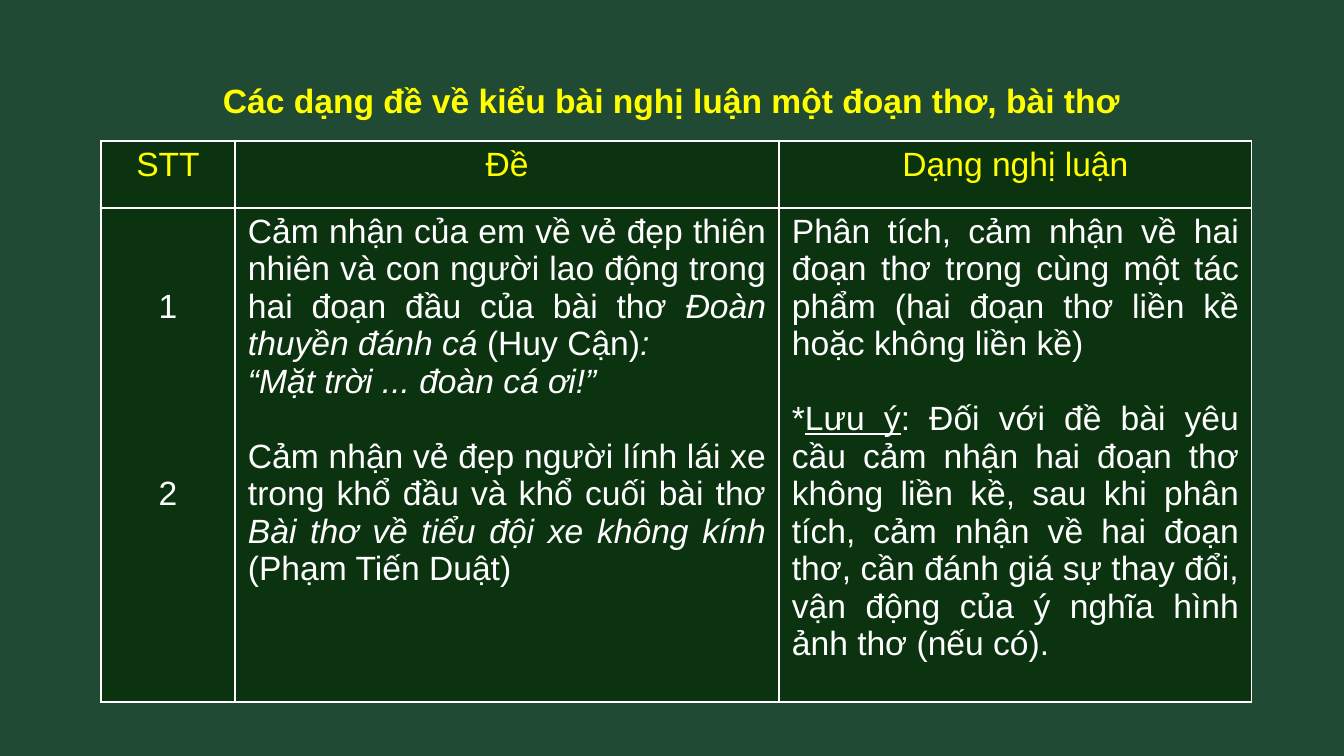
from lxml.etree import SubElement
from pptx import Presentation
from pptx.dml.color import RGBColor
from pptx.enum.text import MSO_ANCHOR, MSO_AUTO_SIZE, PP_ALIGN
from pptx.oxml.ns import qn
from pptx.util import Emu, Pt

GREEN = RGBColor(0x21, 0x4A, 0x34)
DARK_GREEN = RGBColor(0x0B, 0x33, 0x10)
YELLOW = RGBColor(0xFF, 0xFF, 0x00)
WHITE = RGBColor(0xFF, 0xFF, 0xFF)

TITLE = "Các dạng đề về kiểu bài nghị luận một đoạn thơ, bài thơ"
HEADINGS = ["STT", "Đề", "Dạng nghị luận"]
NUMBERS = [(0, [("1", "")]), (150, [("2", "")])]
TOPICS = [
    (0, [
        ("Cảm nhận của em về vẻ đẹp thiên nhiên và con người lao động trong "
         "hai đoạn đầu của bài thơ ", ""),
        ("Đoàn thuyền đánh cá ", "italic"),
        ("(Huy Cận)", ""),
        (":", "italic"),
    ]),
    (0, [("“Mặt trời ... đoàn cá ơi!”", "italic")]),
    (37.5, [
        ("Cảm nhận vẻ đẹp người lính lái xe trong khổ đầu và khổ cuối bài thơ ", ""),
        ("Bài thơ về tiểu đội xe không kính ", "italic"),
        ("(Phạm Tiến Duật)", ""),
    ]),
]
KINDS = [
    (0, [("Phân tích, cảm nhận về hai đoạn thơ trong cùng một tác phẩm "
          "(hai đoạn thơ liền kề hoặc không liền kề)", "")]),
    (37.5, [
        ("*", ""),
        ("Lưu ý", "underline"),
        (": Đối với đề bài yêu cầu cảm nhận hai đoạn thơ không liền kề, sau khi "
         "phân tích, cảm nhận về hai đoạn thơ, cần đánh giá sự thay đổi, vận động "
         "của ý nghĩa hình ảnh thơ (nếu có).", ""),
    ]),
]


def px(length):
    return Emu(round(length * 914400 / 100.8))


class Page:
    """Holds the style and the current slide, and adds its elements."""

    font = "Arial"
    size = Pt(24)

    def __init__(self, deck):
        self.slide = deck.slides.add_slide(deck.slide_layouts[5])
        fill = self.slide.background.fill
        fill.solid()
        fill.fore_color.rgb = GREEN

    def add_text(self, frame, paragraphs, color, align, bold=False):
        for index, (gap, spans) in enumerate(paragraphs):
            para = frame.add_paragraph() if index else frame.paragraphs[0]
            para.alignment = align
            para.space_before = px(gap)
            for text, style in spans:
                span = para.add_run()
                span.text = text
                span.font.name = self.font
                span.font.size = self.size
                span.font.color.rgb = color
                span.font.bold = bold
                span.font.italic = style == "italic"
                span.font.underline = style == "underline"

    def title(self, text, left, top, width, height):
        box = self.slide.shapes.title
        box.left, box.top, box.width, box.height = map(px, (left, top, width, height))
        frame = box.text_frame
        frame.word_wrap = True
        frame.auto_size = MSO_AUTO_SIZE.NONE
        frame.vertical_anchor = MSO_ANCHOR.MIDDLE
        self.add_text(frame, [(0, [(text, "")])], YELLOW, PP_ALIGN.CENTER, True)

    def table(self, left, top, widths, heights):
        table = self.slide.shapes.add_table(
            len(heights), len(widths), px(left), px(top),
            px(sum(widths)), px(sum(heights))).table
        for column, width in zip(table.columns, widths):
            column.width = px(width)
        for row, height in zip(table.rows, heights):
            row.height = px(height)
        return table

    def cell(self, cell, paragraphs, color, align, top=5):
        cell.margin_left = cell.margin_right = px(13)
        cell.margin_top, cell.margin_bottom = px(top), px(5)
        cell.vertical_anchor = MSO_ANCHOR.TOP
        properties = cell._tc.get_or_add_tcPr()
        for side in ("a:lnL", "a:lnR", "a:lnT", "a:lnB"):
            line = SubElement(properties, qn(side), w=str(Pt(1)))
            fill = SubElement(line, qn("a:solidFill"))
            SubElement(fill, qn("a:srgbClr"), val=str(WHITE))
        cell.fill.solid()
        cell.fill.fore_color.rgb = DARK_GREEN
        self.add_text(cell.text_frame, paragraphs, color, align)


def main():
    deck = Presentation()
    deck.slide_width, deck.slide_height = px(1344), px(756)
    page = Page(deck)
    page.title(TITLE, 60, 75, 1223, 51)
    table = page.table(101, 141, [134, 544, 473], [67, 494])
    for column, heading in enumerate(HEADINGS):
        page.cell(table.cell(0, column), [(0, [(heading, "")])], YELLOW, PP_ALIGN.CENTER)
    page.cell(table.cell(1, 0), NUMBERS, WHITE, PP_ALIGN.CENTER, 80)
    for column, paragraphs in enumerate([TOPICS, KINDS], 1):
        page.cell(table.cell(1, column), paragraphs, WHITE, PP_ALIGN.JUSTIFY)
    deck.save("out.pptx")


if __name__ == "__main__":
    main()
